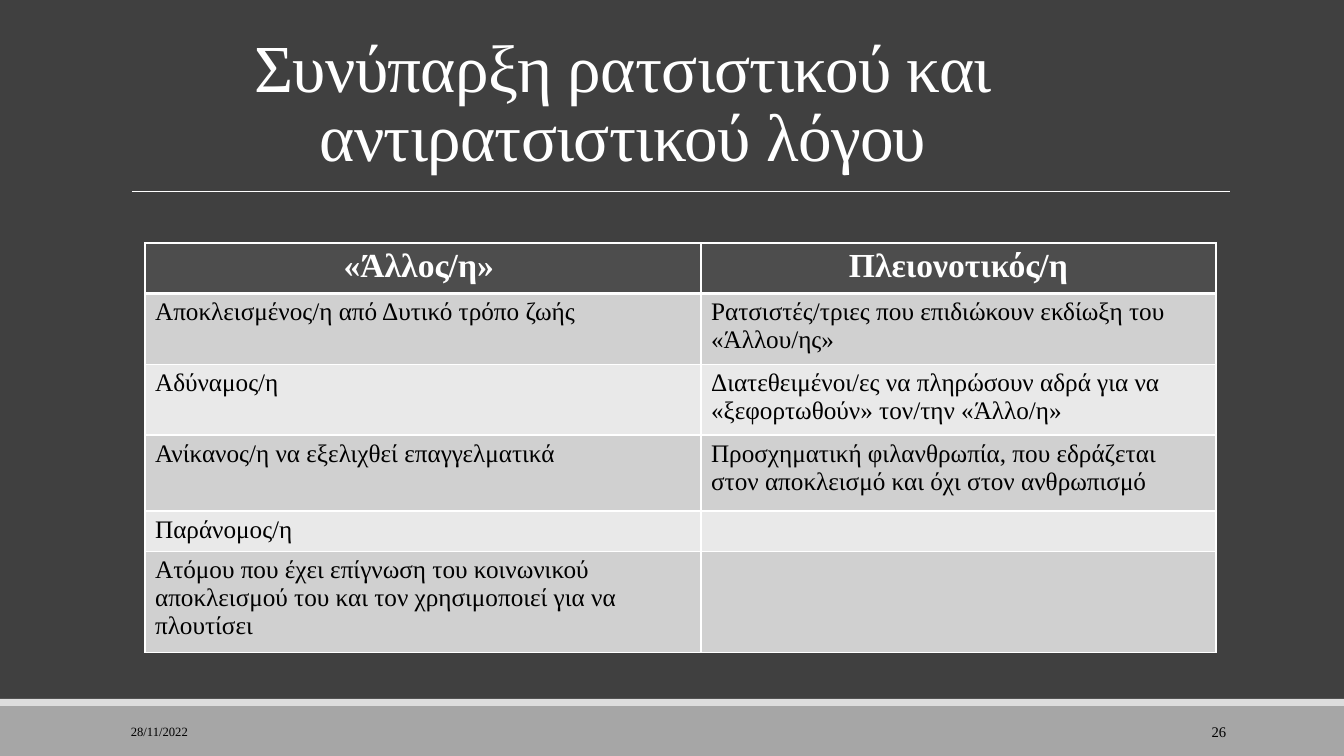
from lxml import etree
from pptx import Presentation
from pptx.dml.color import RGBColor
from pptx.enum.shapes import MSO_CONNECTOR, MSO_SHAPE
from pptx.enum.text import MSO_ANCHOR, PP_ALIGN
from pptx.oxml.ns import qn
from pptx.util import Pt

PX = 914400 / 100.8
FONT = "Times New Roman"
LEFT, CENTER, RIGHT = PP_ALIGN.LEFT, PP_ALIGN.CENTER, PP_ALIGN.RIGHT
BOTTOM, MIDDLE = MSO_ANCHOR.BOTTOM, MSO_ANCHOR.MIDDLE
RECTANGLE, STRAIGHT = MSO_SHAPE.RECTANGLE, MSO_CONNECTOR.STRAIGHT

WHITE = RGBColor(0xFF, 0xFF, 0xFF)
BLACK = RGBColor(0x00, 0x00, 0x00)
BACKDROP = RGBColor(0x40, 0x40, 0x40)
FOOTER_BAND = RGBColor(0xA6, 0xA6, 0xA6)
FOOTER_EDGE = RGBColor(0xDD, 0xDD, 0xDD)
HEADER_FILL = RGBColor(0x4D, 0x4D, 0x4D)
ROW_FILLS = [RGBColor(0xE9, 0xE9, 0xE9), RGBColor(0xD0, 0xD0, 0xD0)]


def px(*lengths):
    """Turn pixel lengths into a list of EMU."""
    return [round(length * PX) for length in lengths]


def add_span(para, text, size, color, align, bold=False):
    para.alignment = align
    span = para.add_run()
    span.text = text
    span.font.name = FONT
    span.font.size = Pt(size)
    span.font.bold = bold
    span.font.color.rgb = color
    return span


deck = Presentation()
deck.slide_width, deck.slide_height = px(1344, 756)
page = deck.slides.add_slide(deck.slide_layouts[6])
page.background.fill.solid()
page.background.fill.fore_color.rgb = BACKDROP

# Footer bands and title rule
for top, height, color in [(706, 50, FOOTER_BAND), (699, 7, FOOTER_EDGE)]:
    band = page.shapes.add_shape(RECTANGLE, *px(0, top, 1344, height))
    band.shadow.inherit = False
    band.fill.solid()
    band.fill.fore_color.rgb = color
    band.line.fill.background()

rule = page.shapes.add_connector(STRAIGHT, *px(132, 191, 1230, 191))
rule.line.color.rgb = WHITE
rule.line.width = Pt(0.5)
etree.SubElement(rule._element.spPr, qn("a:effectLst"))

# Title, date and page number
TEXTS = [
    ("Συνύπαρξη ρατσιστικού και αντιρατσιστικού λόγου",
     (134, 31, 978, 149), 48, WHITE, CENTER, BOTTOM, 0.85, -50),
    ("28/11/2022", (121, 712, 272, 40), 9, BLACK, LEFT, MIDDLE, 1.0, 0),
    ("26", (1092, 712, 144, 40), 10.5, BLACK, RIGHT, MIDDLE, 1.0, 0),
]
for text, place, size, color, align, anchor, line_spacing, tracking in TEXTS:
    box = page.shapes.add_textbox(*px(*place))
    box.text_frame.word_wrap = True
    box.text_frame.vertical_anchor = anchor
    para = box.text_frame.paragraphs[0]
    para.line_spacing = line_spacing
    span = add_span(para, text, size, color, align)
    span._r.get_or_add_rPr().set("spc", str(tracking))

# Table
ROWS = [
    ("«Άλλος/η» ", "Πλειονοτικός/η"),
    ("Αποκλεισμένος/η από Δυτικό τρόπο ζωής",
     "Ρατσιστές/τριες που επιδιώκουν εκδίωξη του «Άλλου/ης»"),
    ("Αδύναμος/η",
     "Διατεθειμένοι/ες να πληρώσουν αδρά για να «ξεφορτωθούν» τον/την «Άλλο/η»"),
    ("Ανίκανος/η να εξελιχθεί επαγγελματικά",
     "Προσχηματική φιλανθρωπία, που εδράζεται στον αποκλεισμό και όχι στον ανθρωπισμό"),
    ("Παράνομος/η", ""),
    ("Ατόμου που έχει επίγνωση του κοινωνικού αποκλεισμού του και τον "
     "χρησιμοποιεί για να πλουτίσει", ""),
]
COLUMN_WIDTHS = px(556, 515)
ROW_HEIGHTS = px(48, 71, 68, 76, 38, 94)

frame = page.shapes.add_table(len(ROWS), len(COLUMN_WIDTHS), *px(145, 243, 1071, 395))
table = frame.table
table.horz_banding = False
for column, width in zip(table.columns, COLUMN_WIDTHS):
    column.width = width

for r, (texts, height) in enumerate(zip(ROWS, ROW_HEIGHTS)):
    table.rows[r].height = height
    is_header = r == 0
    for c, text in enumerate(texts):
        cell = table.cell(r, c)
        borders = cell._tc.get_or_add_tcPr()
        for side in "LRTB":
            thick = (r, side) in [(0, "B"), (1, "T")]
            border = etree.SubElement(borders, qn(f"a:ln{side}"), w=str(Pt(3 if thick else 1)))
            fill = etree.SubElement(border, qn("a:solidFill"))
            etree.SubElement(fill, qn("a:srgbClr"), val=str(WHITE))
        cell.fill.solid()
        cell.fill.fore_color.rgb = HEADER_FILL if is_header else ROW_FILLS[r % 2]
        para = cell.text_frame.paragraphs[0]
        if is_header:
            add_span(para, text, 24, WHITE, CENTER, bold=True)
        elif text:
            add_span(para, text, 18, BLACK, LEFT)

deck.save("out.pptx")
